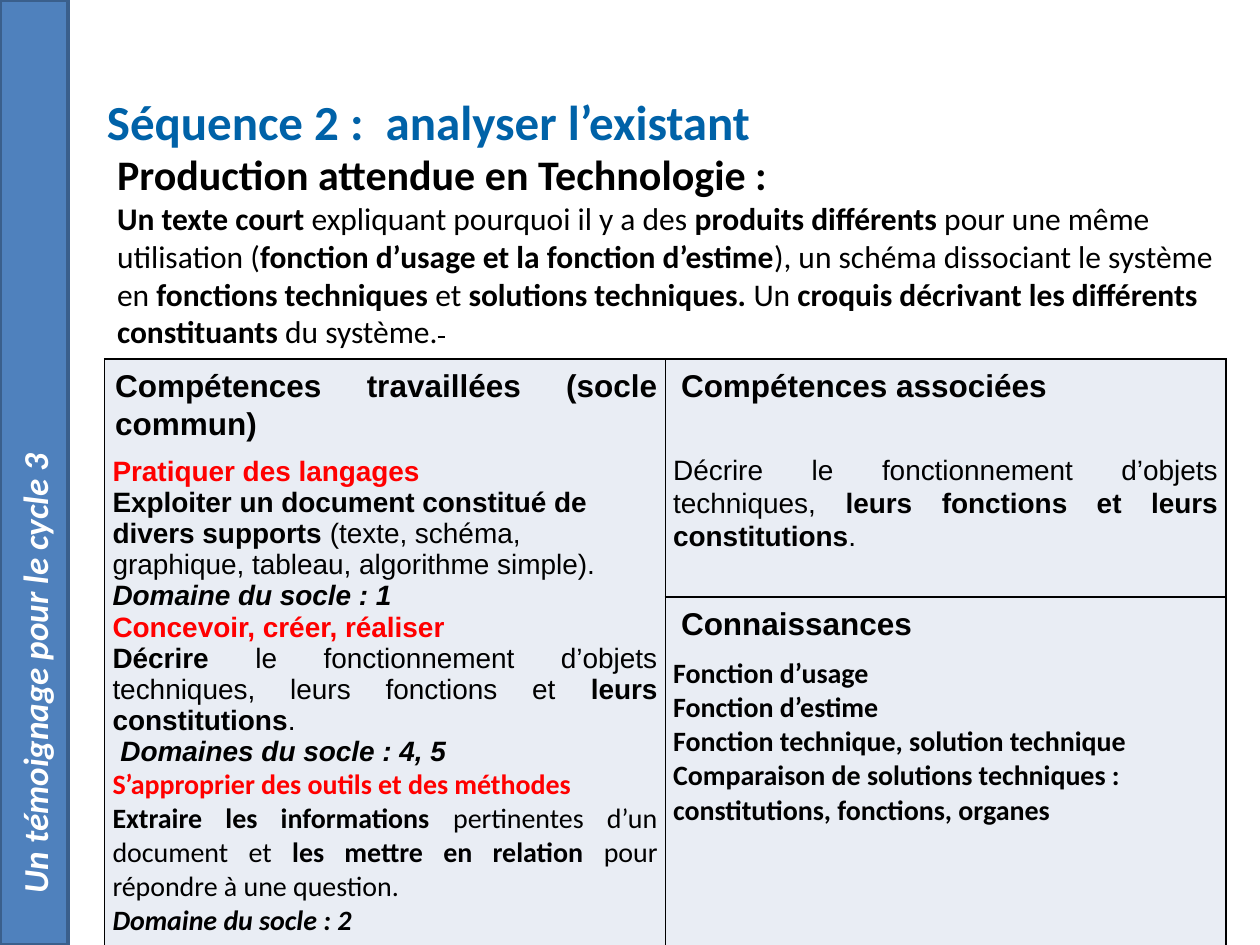
from lxml import etree
from pptx import Presentation
from pptx import util as u
from pptx.dml.color import RGBColor
from pptx.enum import shapes, text
from pptx.oxml.ns import qn

INK = {"black": "000000", "red": "FF0000", "white": "FFFFFF", "title": "0062A8",
       "bar": "4F81BD", "edge": "3A5F8C", "cell": "E9EDF4"}
JUST = text.PP_ALIGN.JUSTIFY


class Deck:
    """Holds the style and the current slide, with a method for each kind of element."""

    def __init__(self, wide, high):
        self.prs = Presentation()
        self.prs.slide_width, self.prs.slide_height = u.Pt(wide), u.Pt(high)
        self.slide = self.prs.slides.add_slide(self.prs.slide_layouts[6])

    def tint(self, name):
        return RGBColor.from_string(INK[name])

    def fill_in(self, frame, paras):
        frame.word_wrap = True
        for i, item in enumerate(paras):
            para = frame.paragraphs[0] if i == 0 else frame.add_paragraph()
            self.para(para, **item)

    def para(self, para, runs, size=16, face="Arial", ink="black",
             align=text.PP_ALIGN.LEFT, left=0, line=None, before=0, after=0):
        para.alignment = align
        para.space_before, para.space_after = u.Pt(before), u.Pt(after)
        if line:
            para.line_spacing = line
        if left:
            para._p.get_or_add_pPr().set("marL", str(u.Pt(left)))
        for words, marks in runs:
            run = para.add_run()
            run.text = words
            font = run.font
            font.name, font.size = face, u.Pt(size)
            font.bold, font.italic = "b" in marks, "i" in marks
            font.color.rgb = self.tint(ink)
            if "s" in marks:
                run._r.get_or_add_rPr().set("strike", "sngStrike")

    def bar(self, box, paras):
        shape = self.slide.shapes.add_shape(shapes.MSO_SHAPE.RECTANGLE, *map(u.Pt, box))
        shape.shadow.inherit = False
        shape.fill.solid()
        shape.fill.fore_color.rgb = self.tint("bar")
        shape.line.color.rgb = self.tint("edge")
        shape.line.width = u.Pt(2)
        frame = shape.text_frame
        frame._txBody.bodyPr.set("vert", "vert270")
        frame.vertical_anchor = text.MSO_ANCHOR.MIDDLE
        self.fill_in(frame, paras)

    def label(self, box, paras):
        shape = self.slide.shapes.add_textbox(*map(u.Pt, box))
        self.fill_in(shape.text_frame, paras)

    def border(self, cell):
        props = cell._tc.get_or_add_tcPr()
        for i, side in enumerate(("lnL", "lnR", "lnT", "lnB")):
            line = etree.Element(qn("a:" + side), w=str(u.Pt(1)))
            fill = etree.SubElement(line, qn("a:solidFill"))
            etree.SubElement(fill, qn("a:srgbClr"), val=INK["black"])
            props.insert(i, line)

    def table(self, box, cols, rows, cells):
        grid = self.slide.shapes.add_table(len(rows), len(cols), *map(u.Pt, box)).table
        for col, wide in zip(grid.columns, cols):
            col.width = u.Pt(wide)
        for row, high in zip(grid.rows, rows):
            row.height = u.Pt(high)
        for cell in grid.iter_cells():
            cell.margin_left = cell.margin_right = u.Pt(4.5)
            cell.margin_top = cell.margin_bottom = u.Pt(4.5)
            cell.fill.solid()
            cell.fill.fore_color.rgb = self.tint("cell")
            self.border(cell)
        grid.cell(0, 0).merge(grid.cell(1, 0))
        for (row, col), paras in cells.items():
            self.fill_in(grid.cell(row, col).text_frame, paras)


def head(words, left):
    return dict(runs=[(words, "b")], size=18, align=JUST, left=left, line=1.07, after=8)


def solo(words, marks="b", **look):
    return dict(runs=[(words, marks)], **look)


def main():
    deck = Deck(720, 540)
    deck.bar((0, 0, 39, 540), [
        solo("Un témoignage pour le cycle 3", "bi", size=20, face="Calibri",
             ink="white", left=22.6)])
    deck.label((59.8, 81.4, 640.8, 425.5), [
        solo("Production attendue en Technologie :", size=24, face="Calibri"),
        dict(size=18, face="Calibri", runs=[
            ("Un texte court", "b"), (" expliquant pourquoi il y a des", ""),
            (" produits différents", "b"), (" pour une même utilisation (", ""),
            ("fonction d’usage et la fonction d’estime", "b"),
            ("), un schéma dissociant le système en", ""),
            (" fonctions techniques ", "b"), ("et ", ""),
            ("solutions techniques. ", "b"), ("Un ", ""),
            ("croquis décrivant les différents constituants ", "b"),
            ("du système.", ""), (" ", "bs")])])
    deck.label((54, 49, 550, 41), [
        solo("Séquence 2 :  analyser l’existant", size=28, face="Calibri", ink="title")])

    skills = [
        head("Compétences travaillées (socle commun)", 1.5),
        solo("Pratiquer des langages", ink="red"),
        dict(runs=[("Exploiter un document constitué de divers supports ", "b"),
                   ("(texte, schéma, graphique, tableau, algorithme simple).", "")]),
        solo("Domaine du socle : 1", "bi"),
        solo("Concevoir, créer, réaliser", ink="red"),
        dict(align=JUST, runs=[
            ("Décrire", "b"),
            (" le fonctionnement d’objets techniques, leurs fonctions et ", ""),
            ("leurs constitutions", "b"), (".", "")]),
        solo("Domaines du socle : 4, 5", "bi", align=JUST, left=4.5),
        solo("S’approprier des outils et des méthodes", face="Calibri", ink="red", align=JUST),
        dict(face="Calibri", align=JUST, runs=[
            ("Extraire les informations ", "b"), ("pertinentes d’un document et ", ""),
            ("les mettre en relation ", "b"), ("pour répondre à une question.", "")]),
        solo("Domaine du socle : 2", "bi", face="Calibri", align=JUST)]
    linked = [
        head("Compétences associées", 4.5),
        dict(align=JUST, line=1.07, before=19.5, runs=[
            ("Décrire le fonctionnement d’objets techniques, ", ""),
            ("leurs fonctions et leurs constitutions", "b"), (".", "")])]
    facts = [head("Connaissances", 4.5)] + [
        solo(words, face="Calibri") for words in (
            "Fonction d’usage", "Fonction d’estime",
            "Fonction technique, solution technique",
            "Comparaison de solutions techniques : constitutions, fonctions, organes")]
    deck.table((59.8, 205.2, 640.8, 253.4), (320.4, 320.4), (136, 117.4),
               {(0, 0): skills, (0, 1): linked, (1, 1): facts})
    deck.prs.save("out.pptx")


if __name__ == "__main__":
    main()
